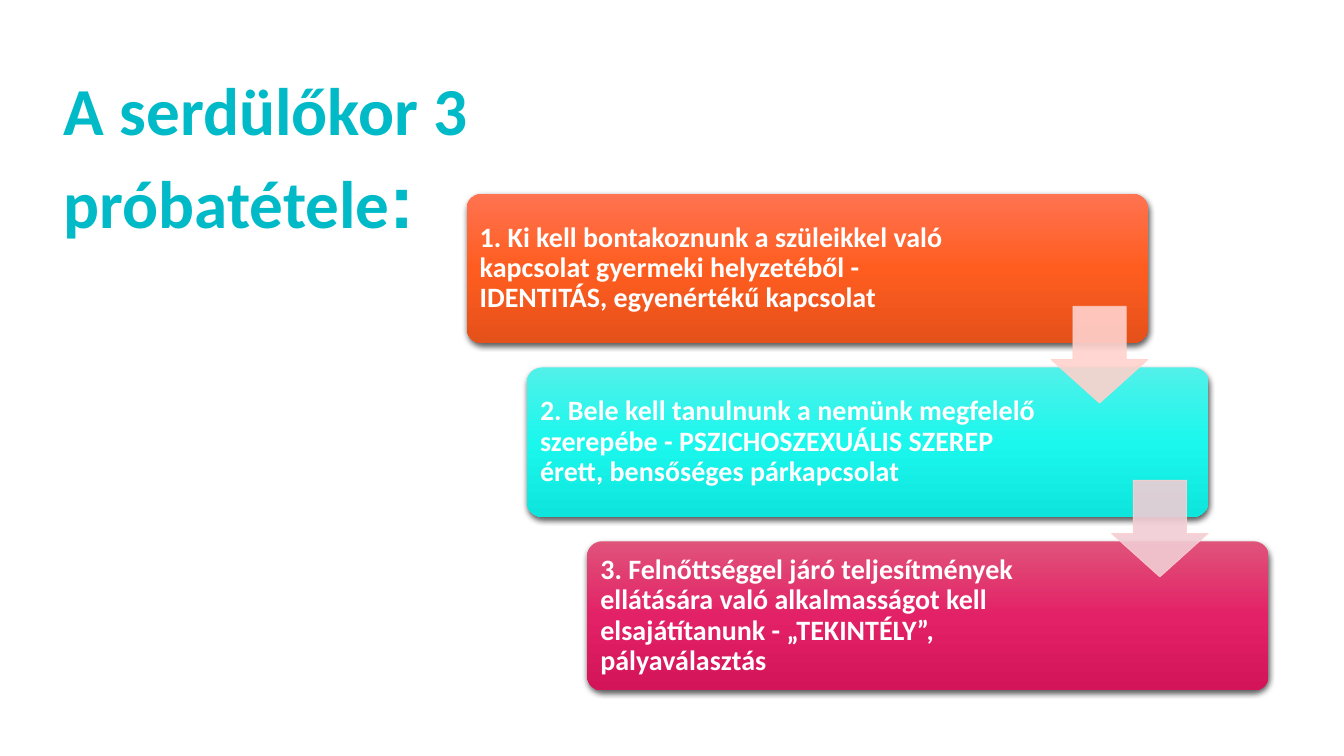
from copy import deepcopy

from lxml.etree import SubElement
from pptx import Presentation
from pptx.dml.color import RGBColor
from pptx.enum.shapes import MSO_SHAPE as Shape
from pptx.enum.text import MSO_ANCHOR as Anchor, PP_ALIGN as Align
from pptx.oxml.ns import qn
from pptx.util import Cm, Pt

COLORS = {
    "title": "00BAC8",
    "text": "FFFFFF",
    "shadow": "000000",
    "arrow_line": "FFD2CD",
}
CHALLENGES = [
    ("1. Ki kell bontakoznunk a szüleikkel való kapcsolat gyermeki helyzetéből - "
     "IDENTITÁS, egyenértékű kapcsolat", ("FF7351", "FF5D20", "E5511A")),
    ("2. Bele kell tanulnunk a nemünk megfelelő szerepébe - PSZICHOSZEXUÁLIS SZEREP "
     "érett, bensőséges párkapcsolat", ("51F1E9", "1BF7ED", "0EE5DC")),
    ("3. Felnőttséggel járó teljesítmények ellátására való alkalmasságot kell "
     "elsajátítanunk - „TEKINTÉLY”, pályaválasztás", ("E0537B", "E32166", "D31458")),
]
ARROW_FILLS = ["FFD2CD", "F1CDD4"]
CARD_WIDTH, CARD_HEIGHT = 17.17, 3.76
STEP_X, STEP_Y = 1.52, 4.38
ARROW_SIZE, ARROW_DROP = 2.44, 2.84


def format_run(run, font_name, size, color):
    run.font.name = font_name
    run.font.size = Pt(size)
    run.font.bold = True
    run.font.color.rgb = RGBColor.from_string(color)


def fill_gradient(fill, colors):
    """Fill from top to bottom with three evenly spaced colours."""
    fill.gradient()
    fill.gradient_angle = 270
    stop_list = fill.gradient_stops[0]._gs.getparent()
    stop_list.append(deepcopy(stop_list[-1]))
    for index, (stop, color) in enumerate(zip(fill.gradient_stops, colors)):
        stop.position = index / 2
        stop.color.rgb = RGBColor.from_string(color)


def set_alpha(color_element, percent):
    SubElement(color_element, qn("a:alpha"), val=str(percent * 1000))


def add_drop_shadow(shape):
    shape.shadow.inherit = False
    effects = shape._element.spPr.find(qn("a:effectLst"))
    shadow = SubElement(effects, qn("a:outerShdw"), blurRad=str(Pt(4.5)),
                        dist=str(Pt(1.5)), dir="5400000", rotWithShape="0")
    set_alpha(SubElement(shadow, qn("a:srgbClr"), val=COLORS["shadow"]), 63)


def place_title(slide, left, top, width, height):
    title = slide.shapes.title
    title.left, title.top, title.width, title.height = map(Cm, (left, top, width, height))
    frame = title.text_frame
    frame.word_wrap = True
    frame.vertical_anchor = Anchor.MIDDLE
    paragraph = frame.paragraphs[0]
    paragraph.alignment = Align.LEFT
    paragraph.line_spacing = 1.04
    for text, font_name, size in [("A serdülőkor 3 próbatétele", "Calibri", 48),
                                  (":", "Arial", 54)]:
        run = paragraph.add_run()
        run.text = text
        format_run(run, font_name, size, COLORS["title"])


def add_card(slide, left, top, text, colors):
    card = slide.shapes.add_shape(Shape.ROUNDED_RECTANGLE, Cm(left), Cm(top),
                                  Cm(CARD_WIDTH), Cm(CARD_HEIGHT))
    card.adjustments[0] = 0.1
    fill_gradient(card.fill, colors)
    card.line.fill.background()
    add_drop_shadow(card)
    frame = card.text_frame
    frame.word_wrap = True
    frame.vertical_anchor = Anchor.MIDDLE
    frame.margin_left = frame.margin_top = frame.margin_bottom = Cm(0.22)
    frame.margin_right = Cm(4.1)
    frame.text = text
    paragraph = frame.paragraphs[0]
    paragraph.alignment = Align.LEFT
    paragraph.line_spacing = 0.9
    format_run(paragraph.runs[0], "Calibri", 20, COLORS["text"])


def add_step_arrow(slide, left, top, color):
    arrow = slide.shapes.add_shape(Shape.DOWN_ARROW, Cm(left), Cm(top),
                                   Cm(ARROW_SIZE), Cm(ARROW_SIZE))
    arrow.adjustments[0], arrow.adjustments[1] = 0.55, 0.45
    arrow.shadow.inherit = False
    arrow.fill.solid()
    arrow.fill.fore_color.rgb = RGBColor.from_string(color)
    arrow.line.color.rgb = RGBColor.from_string(COLORS["arrow_line"])
    arrow.line.width = Pt(0.5)
    for color_element in arrow._element.spPr.iter(qn("a:srgbClr")):
        set_alpha(color_element, 90)


def add_staircase(slide, left, top):
    """Place the cards one step apart, then the arrows at their right edges."""
    for index, (text, colors) in enumerate(CHALLENGES):
        add_card(slide, left + index * STEP_X, top + index * STEP_Y, text, colors)
    for index, color in enumerate(ARROW_FILLS):
        add_step_arrow(slide, left + index * STEP_X + CARD_WIDTH - ARROW_SIZE,
                       top + index * STEP_Y + ARROW_DROP, color)


def main():
    presentation = Presentation()
    presentation.slide_width = Cm(33.87)
    presentation.slide_height = Cm(19.05)
    slide = presentation.slides.add_slide(presentation.slide_layouts[5])
    place_title(slide, 1.35, 0.86, 12.95, 6.05)
    add_staircase(slide, 11.76, 4.88)
    presentation.save("out.pptx")


if __name__ == "__main__":
    main()
